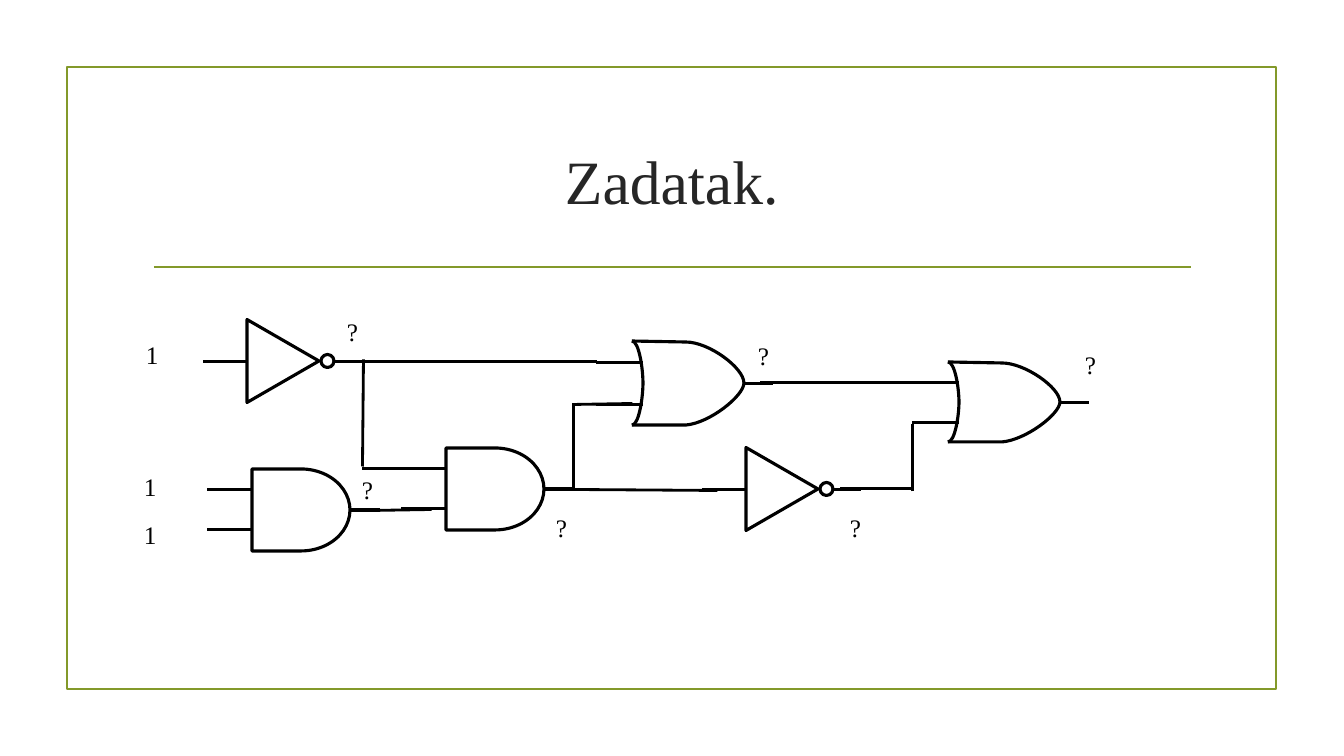
from pptx import Presentation
from pptx.dml.color import RGBColor
from pptx.enum.shapes import MSO_CONNECTOR, MSO_SHAPE
from pptx.enum.text import MSO_ANCHOR, MSO_AUTO_SIZE, PP_ALIGN
from pptx.oxml.ns import qn
from pptx.util import Pt
from lxml import etree

STRAIGHT = MSO_CONNECTOR.STRAIGHT
RECTANGLE, DELAY = MSO_SHAPE.RECTANGLE, MSO_SHAPE.FLOWCHART_DELAY
TRIANGLE, OVAL = MSO_SHAPE.ISOSCELES_TRIANGLE, MSO_SHAPE.OVAL
MIDDLE, CENTER, LEFT = MSO_ANCHOR.MIDDLE, PP_ALIGN.CENTER, PP_ALIGN.LEFT
FIT = MSO_AUTO_SIZE.SHAPE_TO_FIT_TEXT
RIGHT_SIDE = 3

# Content: lengths in px
SLIDE = (1344, 756)
FRAME = (67, 67, 1209, 622)
RULE = (154, 267, 1191, 267)
TITLE = ("Zadatak.", (143, 108, 1058, 144))
NOT_GATES = [(247, 361), (746, 489)]                # left edge, axis
AND_GATES = [(446, 448), (252, 469)]                # left, top
OR_GATES = [(632, 341, 84), (948, 362, 80)]         # left, top, height
WIRES = [
    (363, 359, 362, 466), (362, 468, 402, 468), (353, 361, 597, 361),
    (372, 510, 431, 509), (572, 489, 717, 490), (573, 490, 573, 403),
    (573, 404, 632, 403), (760, 382, 919, 382), (840, 488, 912, 488),
    (912, 491, 912, 424),
]
LABELS = {
    "1": [(136, 334), (134, 466), (134, 514)],
    "?": [(337, 311), (352, 469), (546, 507), (748, 335), (840, 507), (1075, 344)],
}
LABEL_SIZE = {"1": (32, 40), "?": (29, 40)}

THEME = {
    "font": "Times New Roman",
    "accent": RGBColor(0x83, 0x99, 0x2A),
    "title": RGBColor(0x26, 0x26, 0x26),
    "ink": RGBColor(0, 0, 0),
    "title_size": Pt(44), "label_size": Pt(18),
    "frame_width": Pt(1.25), "wire_width": Pt(2), "gate_width": Pt(2.25),
}

prs = Presentation()
SCALE = 12192000 / SLIDE[0]


def emu(*lengths):
    return [round(length * SCALE) for length in lengths]


prs.slide_width, prs.slide_height = emu(*SLIDE)
slide = prs.slides.add_slide(prs.slide_layouts[6])
shapes = slide.shapes


def stroke(part, color, width):
    part.line.color.rgb = color
    part.line.width = width


def outline(shape, color=THEME["ink"], width=THEME["gate_width"]):
    """Leave only the outline of a shape."""
    shape.shadow.inherit = False
    shape.fill.background()
    stroke(shape, color, width)
    return shape


def add_line(ends, color=THEME["ink"], width=THEME["gate_width"]):
    line = shapes.add_connector(STRAIGHT, *emu(*ends))
    stroke(line, color, width)
    etree.SubElement(line._element.spPr, qn("a:effectLst"))
    return line


def add_wire(ends, width=THEME["gate_width"]):
    """Draw a line through pixel centres, for an even thickness."""
    add_line([end + 0.5 for end in ends], width=width)


def add_text(text, box, size, color, align=LEFT):
    frame = shapes.add_textbox(*emu(*box)).text_frame
    frame.word_wrap = align == CENTER
    paragraph = frame.paragraphs[0]
    paragraph.text = text
    paragraph.alignment = align
    paragraph.font.name = THEME["font"]
    paragraph.font.size = size
    paragraph.font.color.rgb = color
    return frame


def add_curve(left, top, points, first_curved):
    """Open outline; from first_curved on, two cubic curves take three points each."""
    start, *rest = [emu(left + x, top + y) for x, y in points]
    builder = shapes.build_freeform(*start, scale=1.0)
    builder.add_line_segments(rest, close=False)
    shape = outline(builder.convert_to_shape())
    segments = list(shape._element.iter(qn("a:lnTo")))
    for first in (first_curved, first_curved + 3):
        curve = etree.Element(qn("a:cubicBezTo"))
        segments[first].addprevious(curve)
        for segment in segments[first:first + 3]:
            curve.append(segment[0])
            segment.getparent().remove(segment)


def add_not(left, axis):
    width, height, bubble = 72, 83, 13
    add_wire((left - 44, axis, left, axis))
    add_wire((left + 87, axis, left + 115, axis))
    outline(shapes.add_shape(OVAL, *emu(left + 74, axis - bubble / 2, bubble, bubble)))
    # the triangle is turned, so its box is measured before the turn
    box = (left + (width - height) / 2, axis - width / 2, height, width)
    outline(shapes.add_shape(TRIANGLE, *emu(*box))).rotation = 90


def add_and(left, top):
    width, height = 98, 82
    axis = top + height / 2
    body = outline(shapes.add_shape(DELAY, *emu(left, top, width, height)))
    for y in (axis - 21, axis + 19):
        add_wire((left - 45, y, left, y))
    add_line((left + width, axis, left + 128, axis)).begin_connect(body, RIGHT_SIDE)


def add_or(left, top, height):
    middle, shoulder, nose, hollow = height / 2, 54, 112, 11
    for y in (top + height / 4, top + height * 3 / 4):
        add_wire((left - 36, y, left + hollow, y))
    add_wire((left + nose, top + middle, left + 141, top + middle))
    body = [
        (0, 0), (shoulder, 1),
        (77, 1), (nose, height * .32), (nose, middle),
        (nose, height * .65), (78, height - 2), (shoulder, height),
        (0, height),
    ]
    back = [
        (0, height),
        (7, height), (hollow, height * .67), (hollow, middle),
        (hollow, height * .33), (7, 0), (0, 0),
    ]
    add_curve(left, top, body, 1)
    add_curve(left, top, back, 0)


outline(shapes.add_shape(RECTANGLE, *emu(*FRAME)), THEME["accent"], THEME["frame_width"])
add_line(RULE, THEME["accent"], THEME["frame_width"])
add_text(*TITLE, THEME["title_size"], THEME["title"], CENTER).vertical_anchor = MIDDLE

for add_gate, places in ((add_not, NOT_GATES), (add_and, AND_GATES), (add_or, OR_GATES)):
    for place in places:
        add_gate(*place)
for wire in WIRES:
    add_wire(wire, THEME["wire_width"])
for text, places in LABELS.items():
    for place in places:
        box = place + LABEL_SIZE[text]
        add_text(text, box, THEME["label_size"], THEME["ink"]).auto_size = FIT

prs.save("out.pptx")
